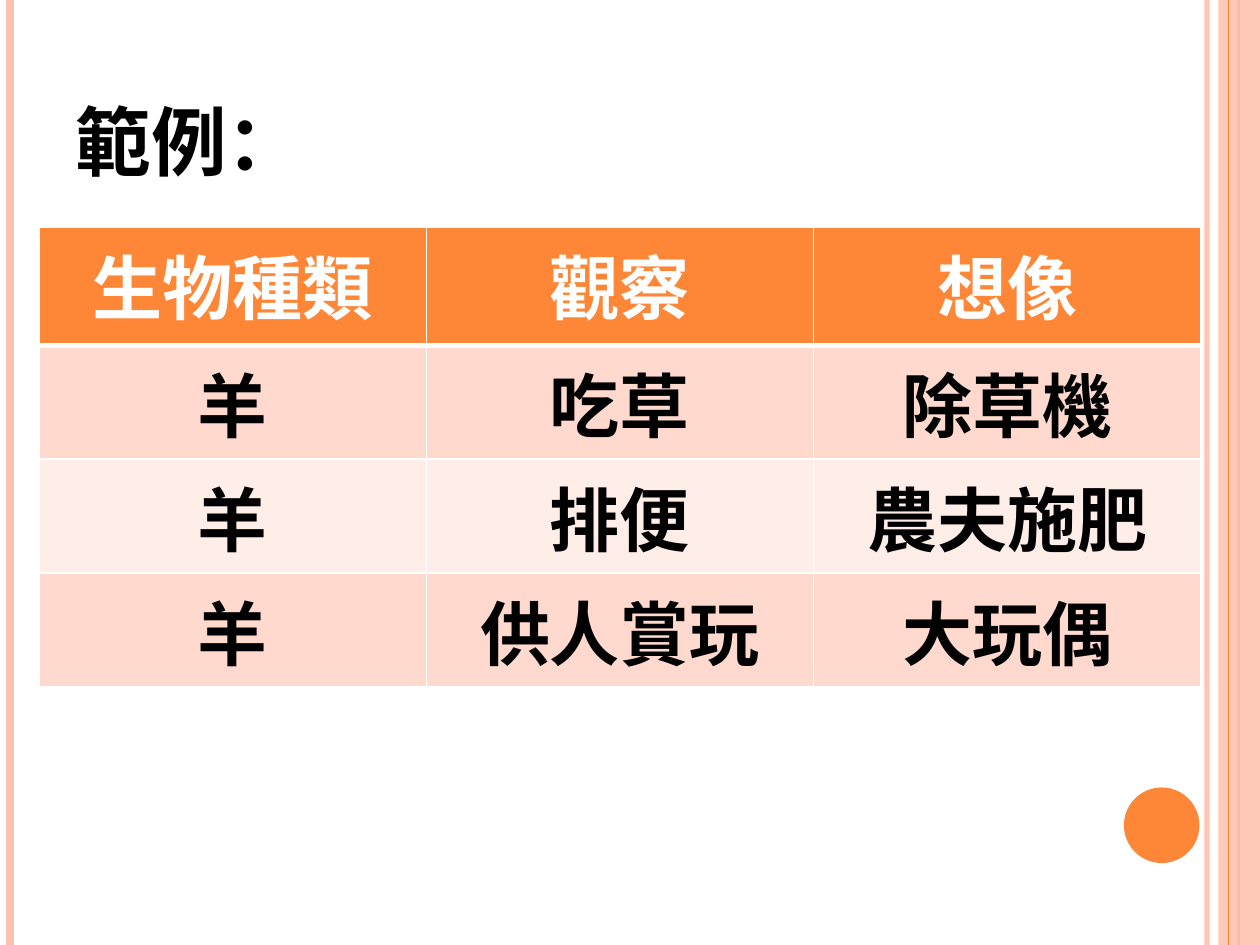
import pptx
import pptx.util
import pptx.dml.color
import pptx.enum.shapes
import pptx.enum.text
import pptx.oxml
import pptx.oxml.ns

COLORS = {
    "orange": "FE8637",
    "peach": "FEC3AE",
    "band": "FFD9CE",
    "pale": "FFEDE8",
    "white": "FFFFFF",
    "black": "000000",
}
FONT = "Noto Sans CJK SC"


def add_alpha(color_format, percent):
    color = color_format._xFill[0]
    alpha = pptx.oxml.parse_xml(f'<a:alpha {pptx.oxml.ns.nsdecls("a")} val="{percent * 1000}"/>')
    color.append(alpha)


def write_text(frame, text, size, color, align, small_caps=False):
    para = frame.paragraphs[0]
    para.alignment = align
    span = para.add_run()
    span.text = text
    span.font.size = pptx.util.Pt(size)
    span.font.bold = True
    span.font.color.rgb = pptx.dml.color.RGBColor.from_string(COLORS[color])
    span.font.name = FONT
    properties = span._r.get_or_add_rPr()
    properties.append(pptx.oxml.parse_xml(f'<a:ea {pptx.oxml.ns.nsdecls("a")} typeface="{FONT}"/>'))
    if small_caps:
        properties.set("cap", "small")


deck = pptx.Presentation()
deck.slide_width = pptx.util.Inches(10)
deck.slide_height = pptx.util.Inches(7.5)
column = deck.slide_width / 100
row = deck.slide_height / 75
page = deck.slides.add_slide(deck.slide_layouts[5])

stripes = [
    ("line", 95.8, "peach", 3, 93),
    ("line", 0.8, "peach", 4.5, 100),
    ("line", 98.3, "orange", 1.5, 100),
    ("panel", 96.7, "peach", 3.3, 87),
    ("line", 97.5, "orange", 0.75, 100),
]
for kind, place, color, width, opacity in stripes:
    left = int(place * column)
    if kind == "line":
        stripe = page.shapes.add_connector(
            pptx.enum.shapes.MSO_CONNECTOR.STRAIGHT, left, 0, left, deck.slide_height)
        stripe.line.width = pptx.util.Pt(width)
        fill = stripe.line.fill
        stripe._element.spPr.append(
            pptx.oxml.parse_xml(f'<a:effectLst {pptx.oxml.ns.nsdecls("a")}/>'))
    else:
        stripe = page.shapes.add_shape(
            pptx.enum.shapes.MSO_SHAPE.RECTANGLE, left, 0, int(width * column), deck.slide_height)
        stripe.shadow.inherit = False
        stripe.line.fill.background()
        fill = stripe.fill
    fill.solid()
    fill.fore_color.rgb = pptx.dml.color.RGBColor.from_string(COLORS[color])
    if opacity < 100:
        add_alpha(fill.fore_color, opacity)

circle = page.shapes.add_shape(
    pptx.enum.shapes.MSO_SHAPE.OVAL,
    int(89.2 * column), int(62.5 * row), int(6 * column), int(6 * row))
circle.shadow.inherit = False
circle.fill.solid()
circle.fill.fore_color.rgb = pptx.dml.color.RGBColor.from_string(COLORS["orange"])
circle.line.fill.background()

title = page.shapes.title
title.left, title.top = int(5 * column), int(3 * row)
title.width, title.height = int(88 * column), int(12.5 * row)
title.text_frame.vertical_anchor = pptx.enum.text.MSO_ANCHOR.BOTTOM
write_text(title.text_frame, "範例：", 54, "black", pptx.enum.text.PP_ALIGN.LEFT, small_caps=True)

entries = [
    ["生物種類", "觀察", "想像"],
    ["羊", "吃草", "除草機"],
    ["羊", "排便", "農夫施肥"],
    ["羊", "供人賞玩", "大玩偶"],
]
row_fills = ["orange", "band", "pale", "band"]
row_heights = [9.4, 8.6, 8.6, 8.6]
table = page.shapes.add_table(
    len(entries), len(entries[0]),
    int(3.1 * column), int(18 * row), int(92.2 * column), int(sum(row_heights) * row)).table
for index, texts in enumerate(entries):
    table.rows[index].height = int(row_heights[index] * row)
    for number, text in enumerate(texts):
        cell = table.cell(index, number)
        properties = cell._tc.get_or_add_tcPr()
        for side in "LRTB":
            heavy = (index == 0 and side == "B") or (index == 1 and side == "T")
            width = pptx.util.Pt(3 if heavy else 1)
            properties.append(pptx.oxml.parse_xml(
                f'<a:ln{side} {pptx.oxml.ns.nsdecls("a")} w="{width}"><a:solidFill>'
                f'<a:srgbClr val="{COLORS["white"]}"/></a:solidFill></a:ln{side}>'))
        cell.fill.solid()
        cell.fill.fore_color.rgb = pptx.dml.color.RGBColor.from_string(COLORS[row_fills[index]])
        write_text(cell.text_frame, text, 40, "white" if index == 0 else "black",
                   pptx.enum.text.PP_ALIGN.CENTER)

deck.save("out.pptx")
